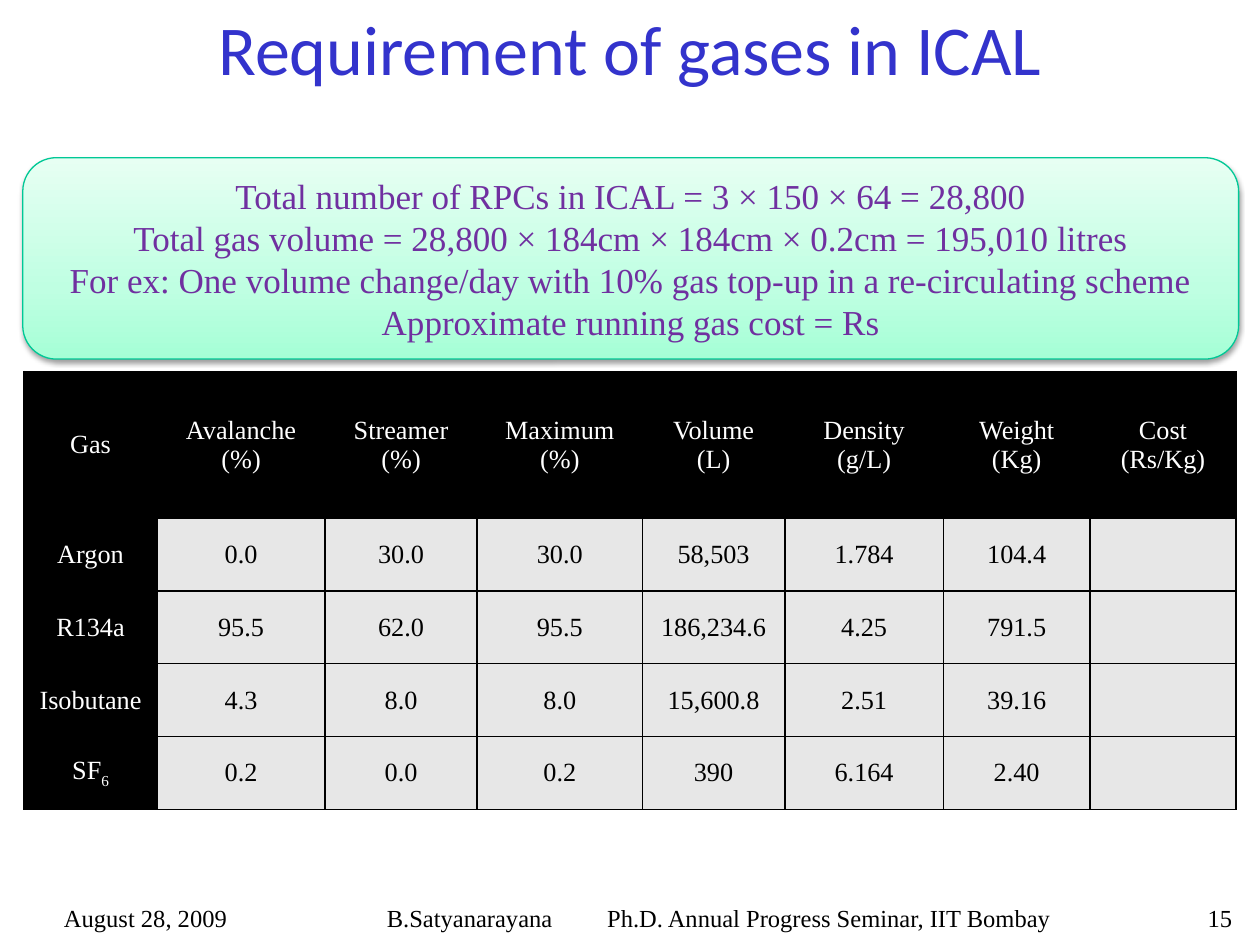
from dataclasses import dataclass

from lxml import etree
from pptx import Presentation
from pptx import util as u
from pptx.dml.color import RGBColor
from pptx.enum import shapes, text
from pptx.oxml import ns, parse_xml

BLUE = RGBColor(0x33, 0x33, 0xCC)
PURPLE = RGBColor(0x70, 0x30, 0xA0)
GREEN = RGBColor(0x00, 0xC8, 0x96)
BLACK = RGBColor(0, 0, 0)
WHITE = RGBColor(0xFF, 0xFF, 0xFF)
GREY = RGBColor(0xE7, 0xE7, 0xE7)
MINTS = ((0, "A5FFD6"), (35000, "BFFFE2"), (100000, "E7FFF3"))
SERIF = "Times New Roman"
LEFT, CENTER, RIGHT = text.PP_ALIGN.LEFT, text.PP_ALIGN.CENTER, text.PP_ALIGN.RIGHT
XMLNS = ns.nsdecls("a")

FACTS = (
    "Total number of RPCs in ICAL = 3 × 150 × 64 = 28,800",
    "Total gas volume = 28,800 × 184cm × 184cm × 0.2cm = 195,010 litres",
    "For ex: One volume change/day with 10% gas top-up in a re-circulating scheme",
    "Approximate running gas cost = Rs",
)
COLUMNS = (2.69, 3.38, 3.07, 3.33, 2.87, 3.2, 2.95, 2.95)
ROWS = (2.95, 1.47, 1.47, 1.47, 1.47)
GASES = (
    ("Gas", "Avalanche\n(%)", "Streamer\n(%)", "Maximum\n(%)",
     "Volume\n(L)", "Density\n(g/L)", "Weight\n(Kg)", "Cost\n(Rs/Kg)"),
    ("Argon", "0.0", "30.0", "30.0", "58,503", "1.784", "104.4", ""),
    ("R134a", "95.5", "62.0", "95.5", "186,234.6", "4.25", "791.5", ""),
    ("Isobutane", "4.3", "8.0", "8.0", "15,600.8", "2.51", "39.16", ""),
    ("SF6", "0.2", "0.0", "0.2", "390", "6.164", "2.40", ""),
)


@dataclass
class Label:
    words: str
    left: float
    top: float
    width: float
    height: float
    align: text.PP_ALIGN
    size: int = 14
    font: str = SERIF
    color: RGBColor = BLACK
    inset: float = 0.25
    tab: float = 0


LABELS = (
    Label("Requirement of gases in ICAL", 0.2, 0.1, 25, 1.7, CENTER, 40, "Calibri", BLUE),
    Label("August 28, 2009", 0.36, 18.06, 5.15, 0.89, CENTER),
    Label("B.Satyanarayana\tPh.D. Annual Progress Seminar, IIT Bombay",
          5.72, 18.06, 17.58, 0.89, LEFT, inset=2.08, tab=4.44),
    Label("15", 23.62, 18.06, 1.47, 0.89, RIGHT),
)


def format_text(tf, size: int, color: RGBColor, align: text.PP_ALIGN, font: str = SERIF) -> None:
    for p in tf.paragraphs:
        p.alignment = align
        for r in p.runs:
            r.font.name = font
            r.font.size = u.Pt(size)
            r.font.color.rgb = color


def draw_label(s, label: Label) -> None:
    box = map(u.Cm, (label.left, label.top, label.width, label.height))
    tf = s.shapes.add_textbox(*box).text_frame
    tf.word_wrap = True
    tf.vertical_anchor = text.MSO_ANCHOR.MIDDLE
    tf.margin_left = u.Cm(label.inset)
    tf.text = label.words
    format_text(tf, label.size, label.color, label.align, label.font)
    if label.tab:
        pPr = tf.paragraphs[0]._p.get_or_add_pPr()
        pPr.append(parse_xml(
            f'<a:tabLst {XMLNS}><a:tab pos="{u.Cm(label.tab)}" algn="l"/></a:tabLst>'))


def draw_facts(s) -> None:
    sp = s.shapes.add_shape(shapes.MSO_SHAPE.ROUNDED_RECTANGLE,
                            u.Cm(0.46), u.Cm(3.18), u.Cm(24.51), u.Cm(4.06))
    sp.line.color.rgb = GREEN
    sp.line.width = u.Pt(0.75)
    stops = "".join(f'<a:gs pos="{pos}"><a:srgbClr val="{color}"/></a:gs>' for pos, color in MINTS)
    sp._element.spPr.find(ns.qn("a:prstGeom")).addnext(parse_xml(
        f'<a:gradFill {XMLNS} rotWithShape="1"><a:gsLst>{stops}</a:gsLst>'
        '<a:lin ang="16200000" scaled="1"/></a:gradFill>'))
    sp._element.spPr.append(parse_xml(
        f'<a:effectLst {XMLNS}><a:outerShdw blurRad="{u.Pt(3.1)}" dist="{u.Pt(1.6)}" '
        'dir="5400000" rotWithShape="0"><a:srgbClr val="000000"><a:alpha val="38000"/>'
        '</a:srgbClr></a:outerShdw></a:effectLst>'))
    tf = sp.text_frame
    tf.word_wrap = True
    tf.auto_size = text.MSO_AUTO_SIZE.SHAPE_TO_FIT_TEXT
    tf.vertical_anchor = text.MSO_ANCHOR.MIDDLE
    tf.text = "\n".join(FACTS)
    format_text(tf, 20, PURPLE, CENTER)


def add_borders(cell) -> None:
    tcPr = cell._tc.get_or_add_tcPr()
    for i, side in enumerate(("lnL", "lnR", "lnT", "lnB")):
        ln = etree.Element(ns.qn(f"a:{side}"), w=str(u.Pt(1)))
        fill = etree.SubElement(ln, ns.qn("a:solidFill"))
        etree.SubElement(fill, ns.qn("a:srgbClr"), val=str(BLACK))
        tcPr.insert(i, ln)


def fill_cell(cell, words: str, is_head: bool) -> None:
    cell.fill.solid()
    cell.fill.fore_color.rgb = BLACK if is_head else GREY
    cell.vertical_anchor = text.MSO_ANCHOR.MIDDLE
    cell.margin_left = cell.margin_right = u.Cm(0.18)
    cell.margin_top = cell.margin_bottom = 0
    tf = cell.text_frame
    tf.text = words
    if words == "SF6":
        p = tf.paragraphs[0]
        p.text = "SF"
        r = p.add_run()
        r.text = "6"
        r._r.get_or_add_rPr().set("baseline", "-25000")
    format_text(tf, 15, WHITE if is_head else BLACK, CENTER)
    add_borders(cell)


def draw_gases(s) -> None:
    table = s.shapes.add_table(len(ROWS), len(COLUMNS), u.Cm(0.48), u.Cm(7.49),
                               u.Cm(sum(COLUMNS)), u.Cm(sum(ROWS))).table
    for column, width in zip(table.columns, COLUMNS):
        column.width = u.Cm(width)
    for row, height in zip(table.rows, ROWS):
        row.height = u.Cm(height)
    for i, gas in enumerate(GASES):
        for j, words in enumerate(gas):
            fill_cell(table.cell(i, j), words, i == 0 or j == 0)


def main() -> None:
    prs = Presentation()
    prs.slide_width, prs.slide_height = u.Cm(25.4), u.Cm(19.05)
    s = prs.slides.add_slide(prs.slide_layouts[6])
    draw_gases(s)
    draw_facts(s)
    for label in LABELS:
        draw_label(s, label)
    prs.save("out.pptx")


if __name__ == "__main__":
    main()
